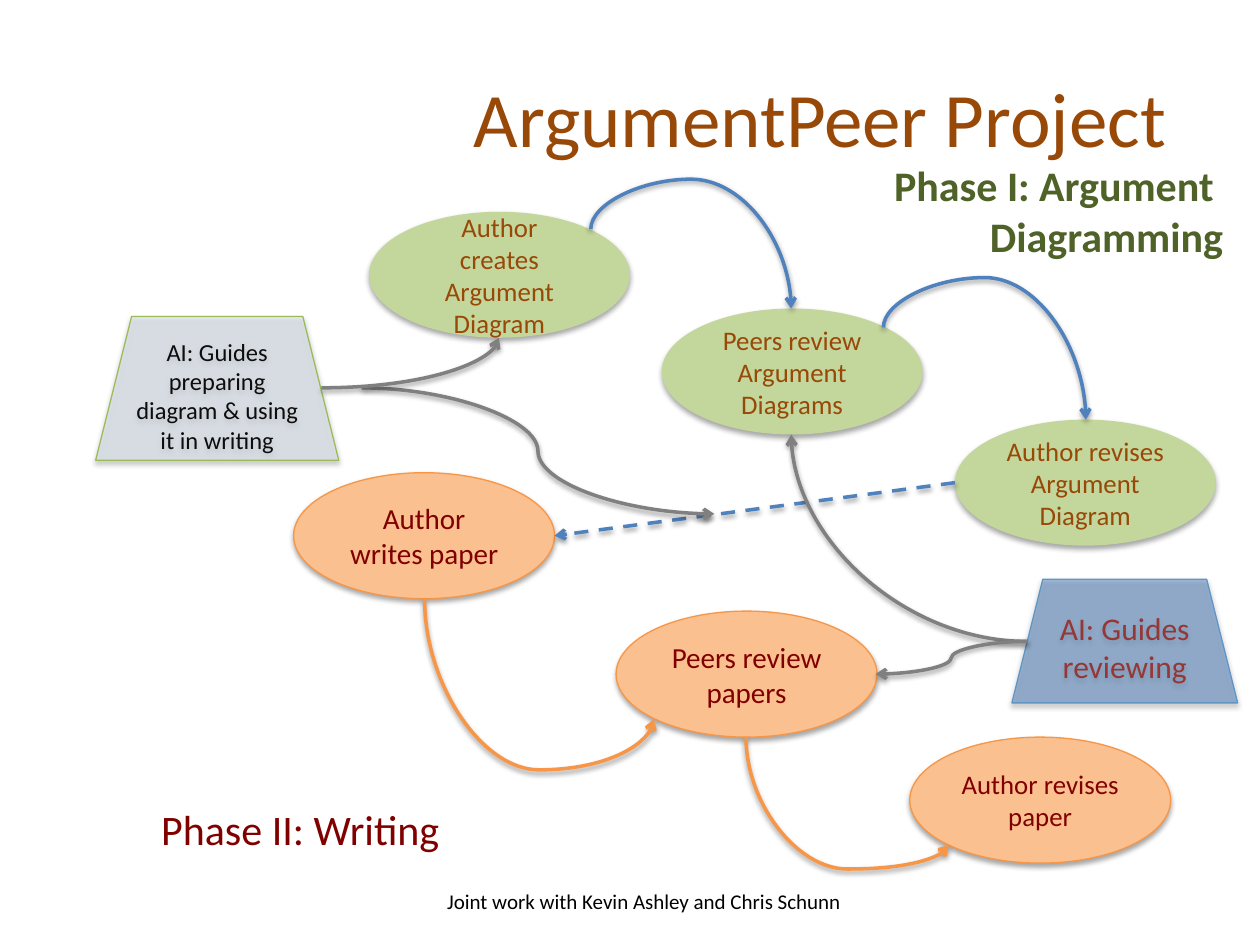
from lxml.etree import SubElement
from pptx import Presentation
from pptx.dml.color import RGBColor
from pptx.enum.dml import MSO_LINE
from pptx.enum.shapes import MSO_CONNECTOR, MSO_SHAPE
from pptx.enum.text import MSO_ANCHOR, PP_ALIGN
from pptx.oxml.ns import qn
from pptx.util import Cm, Pt

COLORS = {
    "green": "C3D69B", "dark green": "4F6228", "brown": "984807",
    "peach": "FAC090", "orange": "F79646", "maroon": "800000",
    "pale blue": "DCE6F2", "olive": "9BBB59", "ink": "0D0D0D",
    "blue": "4F81BD", "steel": "5D96C5", "brick": "953735",
    "gray": "808080", "black": "000000",
}
RGB = {name: RGBColor.from_string(value) for name, value in COLORS.items()}


def add_shadow(shape, opacity, distance):
    """Drop a soft black shadow below; call after fill and line are set."""
    effects = SubElement(shape._element.spPr, qn("a:effectLst"))
    shadow = SubElement(effects, qn("a:outerShdw"), blurRad=str(Pt(3.1)),
                        dist=str(Pt(distance)), dir="5400000", rotWithShape="0")
    black = SubElement(shadow, qn("a:srgbClr"), val=COLORS["black"])
    SubElement(black, qn("a:alpha"), val=str(opacity * 1000))


def add_arrow(start, end, color, preset, rotation=0, flip="", bend=None):
    """Connect two points, given in cm, with a preset connector."""
    width, height = abs(end[0] - start[0]), abs(end[1] - start[1])
    center_x, center_y = (start[0] + end[0]) / 2, (start[1] + end[1]) / 2
    if rotation == 270:
        width, height = height, width
    left, top = center_x - width / 2, center_y - height / 2
    arrow = slide.shapes.add_connector(
        MSO_CONNECTOR.CURVE, Cm(left), Cm(top), Cm(left + width), Cm(top + height))
    properties = arrow._element.spPr
    frame = properties.find(qn("a:xfrm"))
    if rotation:
        frame.set("rot", str(rotation * 60000))
    if flip:
        frame.set("flip" + flip, "1")
    geometry = properties.find(qn("a:prstGeom"))
    geometry.set("prst", preset)
    if bend is not None:
        SubElement(geometry.find(qn("a:avLst")), qn("a:gd"),
                   name="adj1", fmla=f"val {round(bend * 100000)}")
    arrow.line.color.rgb = RGB[color]
    arrow.line.width = Pt(2)
    if preset == "line":
        arrow.line.dash_style = MSO_LINE.DASH
    SubElement(arrow.line._get_or_add_ln(), qn("a:tailEnd"), type="arrow")
    add_shadow(arrow, 38, 1.6)


prs = Presentation()
prs.slide_width, prs.slide_height = Cm(25.4), Cm(19.05)
slide = prs.slides.add_slide(prs.slide_layouts[5])

title = slide.shapes.title
title.left, title.top, title.width, title.height = Cm(1.27), Cm(0.76), Cm(22.86), Cm(3.18)
title.text_frame.vertical_anchor = MSO_ANCHOR.MIDDLE
heading = title.text_frame.paragraphs[0]
heading.text = "ArgumentPeer Project "
heading.alignment = PP_ALIGN.RIGHT
heading.font.name, heading.font.size = "Calibri", Pt(44)
heading.font.color.rgb = RGB["brown"]

# Steps of both phases and the two AI guides
STEP, GUIDE = MSO_SHAPE.OVAL, MSO_SHAPE.TRAPEZOID
STEP_SIZE = (5.26, 2.54)
nodes = [
    ("Author creates Argument Diagram", STEP, (7.44, 4.27), STEP_SIZE, "green", None, "brown", 15.3),
    ("Peers review Argument Diagrams", STEP, (13.34, 6.22), STEP_SIZE, "green", None, "brown", 15.3),
    ("Author revises Argument Diagram", STEP, (19.25, 8.46), STEP_SIZE, "green", None, "brown", 15.3),
    ("Author writes paper", STEP, (5.92, 9.53), STEP_SIZE, "peach", "orange", "maroon", 16.6),
    ("Peers review papers", STEP, (12.42, 12.32), STEP_SIZE, "peach", "orange", "maroon", 16.6),
    ("Author revises paper", STEP, (18.34, 14.86), STEP_SIZE, "peach", "orange", "maroon", 15.3),
    ("AI: Guides preparing diagram & using it in writing", GUIDE,
     (1.93, 6.38), (4.9, 2.9), "pale blue", "olive", "ink", 14),
    ("AI: Guides reviewing", GUIDE, (20.4, 11.68), (4.55, 2.49), "blue", "steel", "brick", 18),
]
for text, kind, place, size, fill, outline, color, points in nodes:
    node = slide.shapes.add_shape(kind, *map(Cm, place + size))
    node.fill.solid()
    node.fill.fore_color.rgb = RGB[fill]
    if kind == GUIDE:
        fill_color = node._element.spPr.find(qn("a:solidFill"))[0]
        SubElement(fill_color, qn("a:alpha"), val="51000")
    if outline:
        node.line.color.rgb = RGB[outline]
        node.line.width = Pt(0.75)
    else:
        node.line.fill.background()
    add_shadow(node, 35, 1.8)
    node.text_frame.word_wrap = True
    node.text_frame.vertical_anchor = MSO_ANCHOR.MIDDLE
    label = node.text_frame.paragraphs[0]
    label.text = text
    label.alignment = PP_ALIGN.CENTER
    label.font.name, label.font.size = "Calibri", Pt(points)
    label.font.color.rgb = RGB[color]

# Flow between the steps
S_CURVE, QUARTER = "curvedConnector3", "curvedConnector2"
add_arrow((11.91, 4.62), (15.95, 6.22), "blue", S_CURVE, 270, "H", -0.63)
add_arrow((17.81, 6.6), (21.89, 8.46), "blue", S_CURVE, 270, "H", -0.54)
add_arrow((19.25, 9.73), (11.18, 10.8), "blue", "line", flip="H")
add_arrow((8.56, 12.07), (13.18, 14.5), "orange", S_CURVE, 270, "H", 1.42)
add_arrow((15.04, 14.86), (19.13, 17.04), "orange", S_CURVE, 270, "H", 1.22)

# Guidance from the AI
add_arrow((7.29, 7.82), (14.4, 10.36), "gray", S_CURVE, bend=0.5)
add_arrow((6.48, 7.82), (10.06, 6.81), "gray", QUARTER, flip="V")
add_arrow((20.7, 12.93), (15.95, 8.76), "gray", QUARTER, 180)
add_arrow((20.7, 12.93), (17.65, 13.59), "gray", S_CURVE, 180, "V", 0.5)

captions = [
    (["Phase II: Writing"], (3, 16.08, 6.78, 1.27), PP_ALIGN.LEFT, 24, "maroon", False, False),
    (["Phase I: Argument ", "Diagramming"], (17.7, 3.1, 7.21, 2.31),
     PP_ALIGN.RIGHT, 24, "dark green", True, False),
    (["Joint work with Kevin Ashley and Chris Schunn"], (8.69, 17.65, 8.59, 1.02),
     PP_ALIGN.CENTER, 12, "black", False, True),
]
for lines, box, alignment, points, color, bold, is_credit in captions:
    frame = slide.shapes.add_textbox(*map(Cm, box)).text_frame
    frame.word_wrap = is_credit
    frame.vertical_anchor = MSO_ANCHOR.MIDDLE if is_credit else MSO_ANCHOR.TOP
    frame.text = "\n".join(lines)
    for line in frame.paragraphs:
        line.alignment = alignment
        line.font.name, line.font.size, line.font.bold = "Calibri", Pt(points), bold
        line.font.color.rgb = RGB[color]

prs.save("out.pptx")
